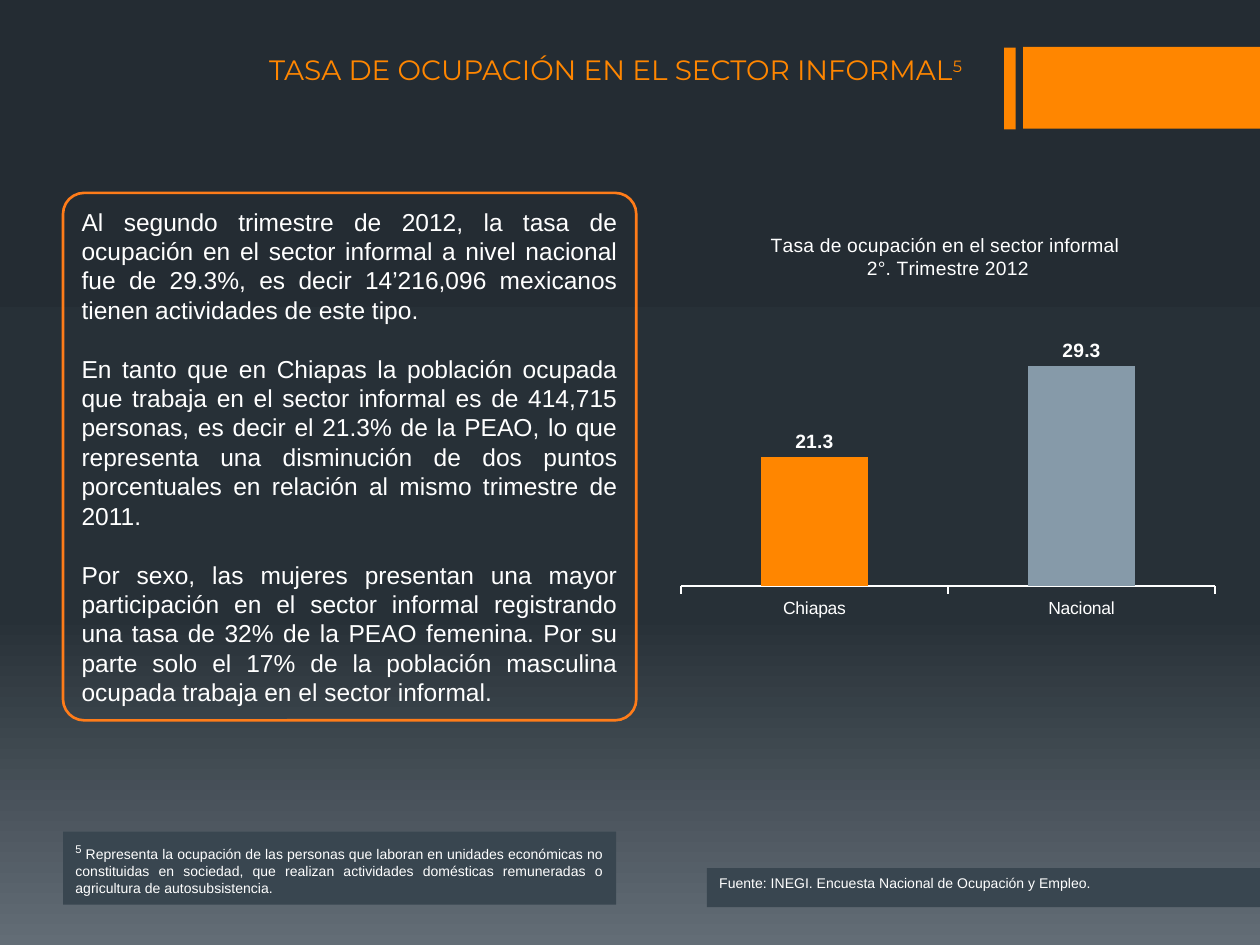
from copy import deepcopy
from pptx import Presentation
from pptx.chart.data import CategoryChartData
from pptx.dml.color import RGBColor
from pptx.enum.chart import XL_CHART_TYPE as ChartType, XL_LABEL_POSITION as LabelPosition
from pptx.enum.chart import XL_TICK_MARK as TickMark
from pptx.enum.shapes import MSO_SHAPE as Shape
from pptx.enum.text import MSO_ANCHOR as Anchor, PP_ALIGN as Align
from pptx.oxml import parse_xml
from pptx.oxml.ns import nsdecls, qn
from pptx.util import Pt

COLORS = {"orange": "FF8600", "outline": "FF7C19", "panel": "394650",
          "bar": "869AA9", "white": "FFFFFF"}
BACKGROUND = [(0, "242C33"), (65, "273037"), (100, "636D76")]
ACCENTS = [(573.8, 27.2, 6.6, 46.8), (584.6, 26.8, 135.4, 46.8)]
TITLE = [("TASA DE OCUPACIÓN EN EL SECTOR INFORMAL", 16, False), ("5", 16, True)]
BODY = [
    "Al segundo trimestre de 2012, la tasa de ocupación en el sector informal a nivel nacional "
    "fue de 29.3%, es decir 14’216,096 mexicanos tienen actividades de este tipo.",
    "En tanto que en Chiapas la población ocupada que trabaja en el sector informal es de 414,715 "
    "personas, es decir el 21.3% de la PEAO, lo que representa una disminución de dos puntos "
    "porcentuales en relación al mismo trimestre de 2011.",
    "Por sexo, las mujeres presentan una mayor participación en el sector informal registrando "
    "una tasa de 32% de la PEAO femenina. Por su parte solo el 17% de la población masculina "
    "ocupada trabaja en el sector informal.",
]
SOURCE = [("Fuente: INEGI. Encuesta Nacional de Ocupación y Empleo.", 8, False)]
FOOTNOTE = [
    ("5", 11, True),
    (" Representa la ocupación de las personas que laboran en unidades económicas no constituidas "
     "en sociedad, que realizan actividades domésticas remuneradas o agricultura de "
     "autosubsistencia.", 8, False),
]
CHART_TITLE = ["Tasa de ocupación en el sector informal ", "2°. Trimestre 2012"]
RATES = [("Chiapas", 21.3, "orange"), ("Nacional", 29.3, "bar")]
PLOT_LAYOUT = {"x": 0.03, "y": 0.21, "w": 0.94, "h": 0.68}


def rgb(name):
    return RGBColor.from_string(COLORS[name])


def add_panel(slide, box, fill=None, line=None, kind=Shape.RECTANGLE):
    shape = slide.shapes.add_shape(kind, *map(Pt, box))
    shape.shadow.inherit = False
    if fill:
        shape.fill.solid()
        shape.fill.fore_color.rgb = rgb(fill)
    else:
        shape.fill.background()
    if line:
        shape.line.color.rgb = rgb(line)
        shape.line.width = Pt(1.5)
    else:
        shape.line.fill.background()
    return shape


def write_text(shape, paragraphs, anchor, align=Align.JUSTIFY, font="Arial", color="white", gap=0):
    frame = shape.text_frame
    frame.word_wrap = True
    frame.vertical_anchor = anchor
    for index, runs in enumerate(paragraphs):
        paragraph = frame.add_paragraph() if index else frame.paragraphs[0]
        paragraph.alignment = align
        if index:
            paragraph.space_before = Pt(gap)
        paragraph.font.name = font
        paragraph.font.color.rgb = rgb(color)
        for text, size, raised in runs:
            run = paragraph.add_run()
            run.text = text
            run.font.size = Pt(size)
            if raised:
                run._r.get_or_add_rPr().set("baseline", "30000")


def paint_background(slide):
    fill = slide.background.fill
    fill.gradient()
    fill.gradient_angle = 270
    stops = slide.background._cSld.find(".//" + qn("a:gsLst"))
    stops.append(deepcopy(stops[-1]))
    for stop, (position, color) in zip(fill.gradient_stops, BACKGROUND):
        stop.position = position / 100
        stop.color.rgb = RGBColor.from_string(color)


def add_rate_chart(slide, box):
    data = CategoryChartData(number_format="0.0")
    data.categories = [name for name, _, _ in RATES]
    data.add_series("Tasa de ocupación", [value for _, value, _ in RATES])
    chart = slide.shapes.add_chart(ChartType.COLUMN_CLUSTERED, *map(Pt, box), data).chart
    chart.has_legend = False
    chart.font.name = "Arial"
    chart.font.size = Pt(10)
    chart.font.color.rgb = rgb("white")

    title = chart.chart_title.text_frame
    for index, text in enumerate(CHART_TITLE):
        paragraph = title.add_paragraph() if index else title.paragraphs[0]
        paragraph.text = text
        paragraph.font.name = "Arial"
        paragraph.font.size = Pt(11)
        paragraph.font.bold = False
        paragraph.font.color.rgb = rgb("white")

    values = chart.value_axis
    values.visible = False
    values.has_major_gridlines = False
    values.minimum_scale, values.maximum_scale = 10, 35
    categories = chart.category_axis
    categories.major_tick_mark = TickMark.OUTSIDE
    categories.format.line.color.rgb = rgb("white")
    categories.format.line.width = Pt(1.25)

    plot = chart.plots[0]
    plot.gap_width = 150
    plot.vary_by_categories = False
    plot.has_data_labels = True
    labels = plot.data_labels
    labels.show_value = True
    labels.number_format = "0.0"
    labels.number_format_is_linked = False
    labels.position = LabelPosition.OUTSIDE_END
    labels.font.name = "Arial"
    labels.font.size = Pt(11)
    labels.font.bold = True
    labels.font.color.rgb = rgb("white")
    for index, (_, _, color) in enumerate(RATES):
        fill = plot.series[0].points[index].format.fill
        fill.solid()
        fill.fore_color.rgb = rgb(color)

    area = chart._chartSpace.find(".//" + qn("c:plotArea"))
    for layout in area.findall(qn("c:layout")):
        area.remove(layout)
    modes = "".join(f'<c:{key}Mode val="edge"/>' for key in "xy")
    sizes = "".join(f'<c:{key} val="{value}"/>' for key, value in PLOT_LAYOUT.items())
    area.insert(0, parse_xml(
        f'<c:layout {nsdecls("c")}><c:manualLayout><c:layoutTarget val="inner"/>'
        f'{modes}{sizes}</c:manualLayout></c:layout>'))


def main():
    presentation = Presentation()
    presentation.slide_width, presentation.slide_height = Pt(720), Pt(540)
    slide = presentation.slides.add_slide(presentation.slide_layouts[6])
    paint_background(slide)
    for box in ACCENTS:
        add_panel(slide, box, "orange")

    body = add_panel(slide, (36, 110.2, 327.6, 301.4), line="outline", kind=Shape.ROUNDED_RECTANGLE)
    body.adjustments[0] = 0.04
    write_text(body, [[(text, 14, False)] for text in BODY], Anchor.MIDDLE, gap=16.8)
    source = add_panel(slide, (403.9, 496.1, 316.1, 22.3), "panel")
    write_text(source, [SOURCE], Anchor.TOP)
    title = slide.shapes.add_textbox(*map(Pt, (132.5, 26.6, 438.5, 46.1)))
    write_text(title, [TITLE], Anchor.TOP, Align.CENTER, "Montserrat", "orange")
    footnote = add_panel(slide, (36, 475.2, 316.1, 41.8), "panel")
    write_text(footnote, [FOOTNOTE], Anchor.MIDDLE)
    add_rate_chart(slide, (379.4, 121.7, 324.7, 239.8))
    presentation.save("out.pptx")


if __name__ == "__main__":
    main()
